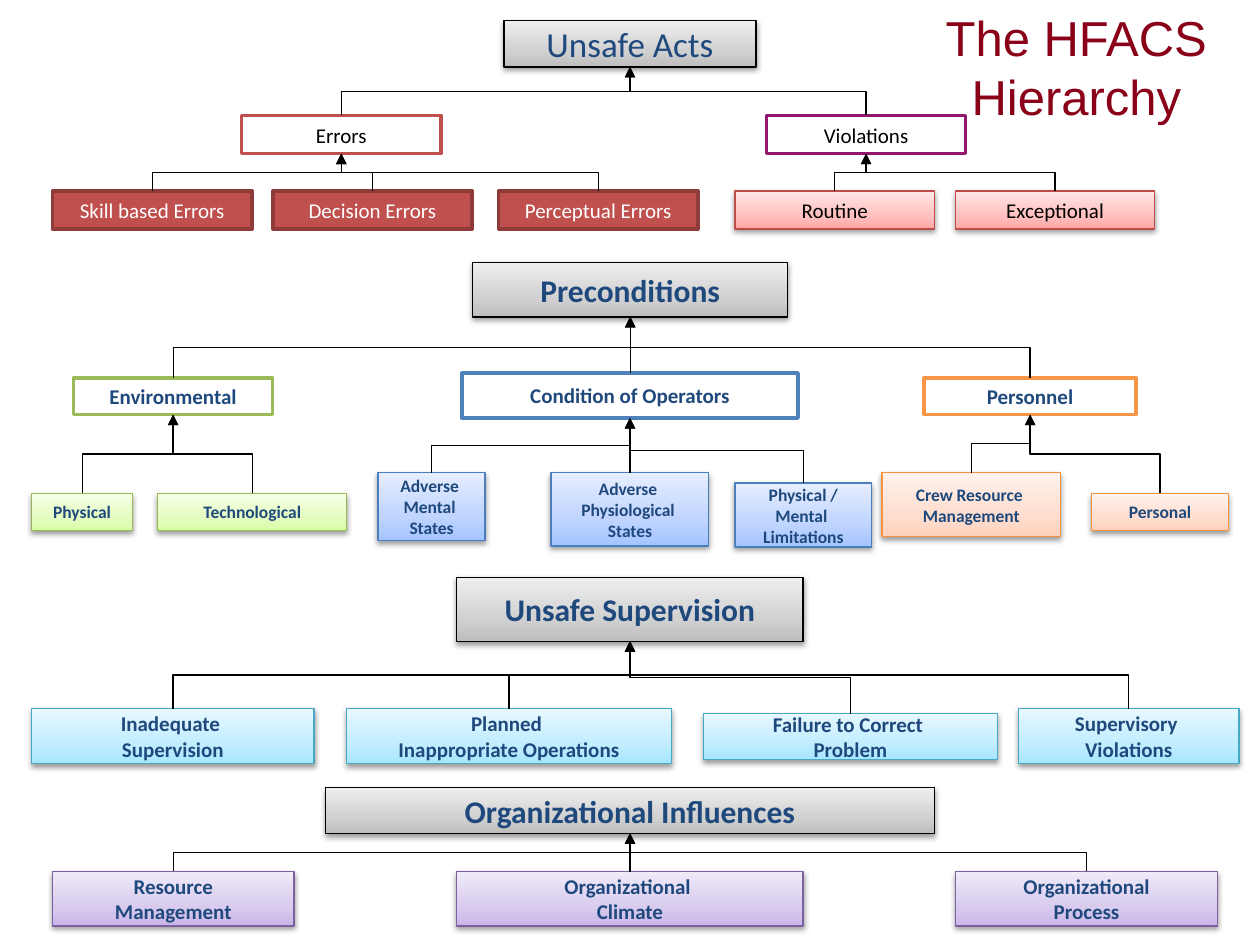
from copy import deepcopy
from dataclasses import dataclass

from lxml.etree import SubElement
from pptx import Presentation
from pptx.dml.color import RGBColor
from pptx.enum.shapes import MSO_CONNECTOR as Link, MSO_SHAPE as Preset
from pptx.enum.text import MSO_ANCHOR as Anchor, MSO_AUTO_SIZE as AutoSize, PP_ALIGN as Align
from pptx.oxml.ns import qn
from pptx.util import Cm, Pt

COLOURS = {
    "black": "000000", "white": "FFFFFF", "navy": "1F497D", "title": "890018",
    "red": "C0504D", "dark red": "8E3B39", "plum": "93176C",
    "green": "9BBB59", "blue": "4F81BD", "orange": "F79646",
    "grey 1": "BDBDBD", "grey 2": "D1D1D1", "grey 3": "EEEEEE",
    "rose 1": "FFA6A5", "rose 2": "FFC0BF", "rose 3": "FFE7E7", "rose line": "BF4C48",
    "lime 1": "DAFDA7", "lime 2": "E4FCC2", "lime 3": "F5FFE7", "lime line": "98B955",
    "peach 1": "FFD2BD", "peach 2": "FFDED0", "peach 3": "FFF2ED", "peach line": "F69240",
    "sky 1": "A4C4FF", "sky 2": "BFD4FF", "sky 3": "E6EEFF", "sky line": "4B7EBC",
    "aqua 1": "A7E6FF", "aqua 2": "C1EDFF", "aqua 3": "E7F8FF", "aqua line": "46AAC5",
    "lilac 1": "C9B5E8", "lilac 2": "D8CBEE", "lilac 3": "F0EAF9", "lilac line": "7D60A0",
}


@dataclass
class Style:
    """Look of one kind of box; a glossy box has a gradient and a shadow."""
    fill: str
    line: str
    size: int = 12
    bold: bool = True
    text: str = "navy"
    glossy: bool = True


STYLES = {
    "acts": Style("grey", "black", 20, False),
    "level": Style("grey", "black", 18),
    "errors": Style("white", "red", 12, False, "black", False),
    "violations": Style("white", "plum", 12, False, "black", False),
    "error": Style("red", "dark red", 12, False, "white", False),
    "violation": Style("rose", "rose line", 12, False, "black"),
    "environment": Style("white", "green", glossy=False),
    "condition": Style("white", "blue", glossy=False),
    "personnel": Style("white", "orange", glossy=False),
    "surroundings": Style("lime", "lime line", 10),
    "state": Style("sky", "sky line", 10),
    "crew": Style("peach", "peach line", 10),
    "supervision": Style("aqua", "aqua line"),
    "organization": Style("lilac", "lilac line"),
}

HIERARCHY = [
    ("Unsafe Acts", "acts", (10.16, 0.42, 5.08, 0.93), [
        ("Errors", "errors", (4.87, 2.33, 4.02, 0.77), [
            ("Skill based Errors", "error", (1.06, 3.85, 4.02, 0.77), []),
            ("Decision Errors", "error", (5.5, 3.85, 4.02, 0.77), []),
            ("Perceptual Errors", "error", (10.05, 3.85, 4.02, 0.77), []),
        ]),
        ("Violations", "violations", (15.45, 2.33, 4.02, 0.77), [
            ("Routine", "violation", (14.82, 3.85, 4.02, 0.77), []),
            ("Exceptional", "violation", (19.26, 3.85, 4.02, 0.77), []),
        ]),
    ]),
    ("Preconditions", "level", (9.53, 5.29, 6.35, 1.1), [
        ("Environmental", "environment", (1.48, 7.62, 4.02, 0.74), [
            ("Physical", "surroundings", (0.64, 9.95, 2.03, 0.74), []),
            ("Technological", "surroundings", (3.18, 9.95, 3.81, 0.74), []),
        ]),
        ("Condition of Operators", "condition", (9.31, 7.52, 6.78, 0.91), [
            ("Adverse \nMental \nStates", "state", (7.62, 9.53, 2.16, 1.37), []),
            ("Adverse \nPhysiological \nStates", "state", (11.11, 9.53, 3.18, 1.48), []),
            ("Physical / Mental \nLimitations", "state", (14.82, 9.74, 2.75, 1.29), []),
        ]),
        ("Personnel", "personnel", (18.63, 7.62, 4.27, 0.74), [
            ("Crew Resource \nManagement", "crew", (17.78, 9.53, 3.6, 1.29), []),
            ("Personal", "crew", (22.01, 9.95, 2.75, 0.74), []),
        ]),
    ]),
    ("Unsafe Supervision", "level", (9.21, 11.64, 6.98, 1.29), [
        ("Inadequate \nSupervision", "supervision", (0.64, 14.29, 5.69, 1.1), []),
        ("Planned \nInappropriate Operations", "supervision", (6.98, 14.29, 6.56, 1.1), []),
        ("Failure to Correct \nProblem", "supervision", (14.18, 14.39, 5.93, 0.92), []),
        ("Supervisory \nViolations", "supervision", (20.53, 14.29, 4.45, 1.1), []),
    ]),
    ("Organizational Influences", "level", (6.56, 15.88, 12.28, 0.92), [
        ("Resource\nManagement", "organization", (1.06, 17.57, 4.87, 1.1), []),
        ("Organizational \nClimate", "organization", (9.21, 17.57, 6.98, 1.1), []),
        ("Organizational\nProcess", "organization", (19.26, 17.57, 5.29, 1.1), []),
    ]),
]


def colour(name):
    """Return the named colour."""
    return RGBColor.from_string(COLOURS[name])


def write(frame, text, font_name, size, bold, text_colour):
    """Put one centred paragraph into a text frame."""
    frame.word_wrap = True
    paragraph = frame.paragraphs[0]
    paragraph.text = text
    paragraph.alignment = Align.CENTER
    font = paragraph.font
    font.name, font.size, font.bold = font_name, Pt(size), bold
    font.color.rgb = colour(text_colour)


def add_gloss(box, family):
    """Give a box its three-step gradient, light at the top, and a soft shadow."""
    box.fill.gradient()
    box.fill.gradient_angle = 90
    stop_list = box._element.spPr.find(qn("a:gradFill")).find(qn("a:gsLst"))
    stop_list.append(deepcopy(stop_list[0]))
    for step, (stop, position) in enumerate(zip(box.fill.gradient_stops, (0, 0.35, 1)), 1):
        stop.position = position
        stop.color.rgb = colour(f"{family} {step}")
    effects = box._element.spPr.find(qn("a:effectLst"))
    shadow = SubElement(effects, qn("a:outerShdw"), blurRad="40000", dist="20000",
                        dir="5400000", rotWithShape="0")
    shade = SubElement(shadow, qn("a:srgbClr"), val=COLOURS["black"])
    SubElement(shade, qn("a:alpha"), val="38000")


def add_box(slide, text, style, place):
    """Add one labelled box of the hierarchy."""
    box = slide.shapes.add_shape(Preset.RECTANGLE, *map(Cm, place))
    box.shadow.inherit = False
    if style.glossy:
        add_gloss(box, style.fill)
    else:
        box.fill.solid()
        box.fill.fore_color.rgb = colour(style.fill)
    box.line.color.rgb = colour(style.line)
    box.line.width = Pt(0.75 if style.glossy else 2)
    box.text_frame.vertical_anchor = Anchor.MIDDLE
    write(box.text_frame, text, "Calibri", style.size, style.bold, style.text)
    return box


def add_arrow(slide, child, parent):
    """Lead an arrow from the top of a child up to the foot of its parent."""
    start_x, end_x = (box.left + box.width // 2 for box in (child, parent))
    start_y, end_y = child.top, parent.top + parent.height
    if abs(start_x - end_x) < Cm(0.05):
        arrow = slide.shapes.add_connector(Link.STRAIGHT, end_x, start_y, end_x, end_y)
    else:
        middle_x, middle_y = (start_x + end_x) // 2, (start_y + end_y) // 2
        half_rise, half_run = (start_y - end_y) // 2, abs(start_x - end_x) // 2
        rightward = end_x > start_x
        reach = half_rise if rightward else -half_rise
        arrow = slide.shapes.add_connector(
            Link.ELBOW, middle_x + reach, middle_y + half_run,
            middle_x - reach, middle_y - half_run)
        arrow.rotation = 90 if rightward else 270
    arrow.line.color.rgb = colour("black")
    arrow.line.width = Pt(0.75)
    SubElement(arrow.line._get_or_add_ln(), qn("a:tailEnd"), type="triangle")
    SubElement(arrow._element.spPr, qn("a:effectLst"))


def add_branch(slide, text, style, place, children):
    """Add a box, everything below it and the arrows between them."""
    parent = add_box(slide, text, STYLES[style], place)
    for child in children:
        add_arrow(slide, add_branch(slide, *child), parent)
    return parent


def set_title(slide, text):
    """Place and format the title in the top right corner."""
    title = slide.shapes.title
    title.left, title.top, title.width, title.height = map(Cm, (17.99, 0.02, 7.41, 2.64))
    title.text_frame.vertical_anchor = Anchor.TOP
    title.text_frame.auto_size = AutoSize.NONE
    write(title.text_frame, text, "Arial", 28, False, "title")


def main():
    """Build the slide and save it."""
    deck = Presentation()
    deck.slide_width, deck.slide_height = Cm(25.4), Cm(19.05)
    slide = deck.slides.add_slide(deck.slide_layouts[5])
    set_title(slide, "The HFACS Hierarchy")
    for level in HIERARCHY:
        add_branch(slide, *level)
    deck.save("out.pptx")


if __name__ == "__main__":
    main()
